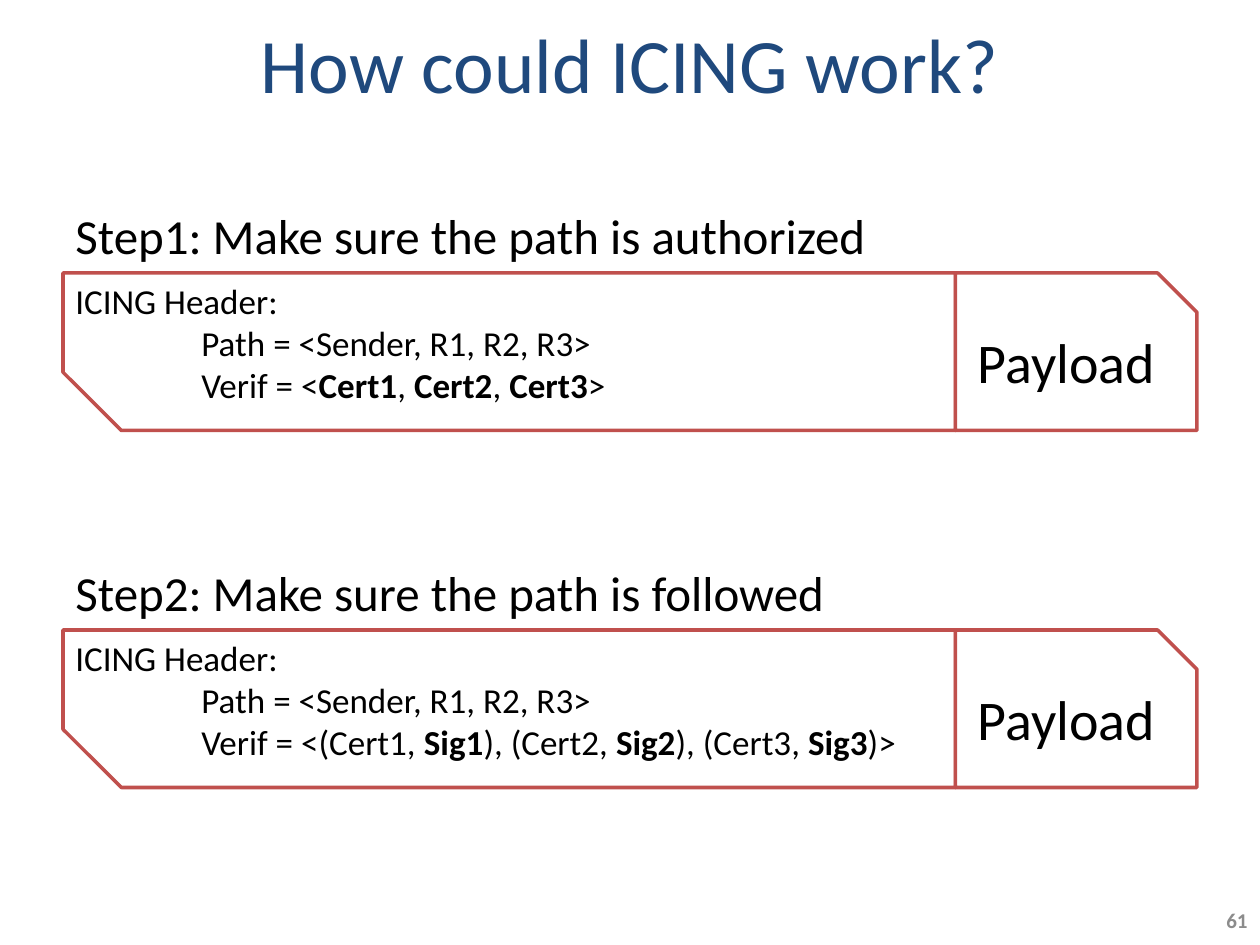
from lxml.etree import SubElement
from pptx import Presentation
from pptx.dml.color import RGBColor
from pptx.enum.shapes import MSO_SHAPE as Shape
from pptx.enum.text import MSO_ANCHOR as Anchor, PP_ALIGN as Align
from pptx.oxml.ns import qn
from pptx.util import Pt

FONT = "Calibri"
BLACK, WHITE, RED, NAVY, GRAY = "000000", "FFFFFF", "C0504D", "1F497D", "8C8C8C"
LEFT, HEADER_WIDTH, PAYLOAD_WIDTH, PACKET_HEIGHT = 36, 510, 138, 90
TAB_STOP = 72
PATH_LINE = "\tPath = <Sender, R1, R2, R3>"
STEPS = [
    ("Step1: Make sure the path is authorized",
     ["\tVerif = <", "Cert1", ", ", "Cert2", ", ", "Cert3", ">"]),
    ("Step2: Make sure the path is followed",
     ["\tVerif = <(Cert1, ", "Sig1", "), (Cert2, ", "Sig2", "), (Cert3, ", "Sig3", ")>"]),
]
FIRST_TOP, STEP_PITCH = 156, 204


def color(hex_string):
    return RGBColor.from_string(hex_string)


def style_span(span, size, hex_string, bold=False):
    span.font.name = FONT
    span.font.size = Pt(size)
    span.font.color.rgb = color(hex_string)
    span.font.bold = bold


def set_tab_stop(para, position):
    tabs = SubElement(para._p.get_or_add_pPr(), qn("a:tabLst"))
    SubElement(tabs, qn("a:tab"), pos=str(Pt(position)), algn="l")


def write_lines(frame, lines, size, hex_string=BLACK, align=Align.LEFT, anchor=Anchor.TOP):
    frame.word_wrap = True
    frame.vertical_anchor = anchor
    for index, spans in enumerate(lines):
        para = frame.add_paragraph() if index else frame.paragraphs[0]
        para.alignment = align
        if spans[0].startswith("\t"):
            set_tab_stop(para, TAB_STOP)
        for position, text in enumerate(spans):
            span = para.add_run()
            span.text = text
            style_span(span, size, hex_string, bold=position % 2 == 1)


def add_text(page, left, top, width, height, lines, size, **style):
    box = page.shapes.add_textbox(Pt(left), Pt(top), Pt(width), Pt(height))
    write_lines(box.text_frame, lines, size, **style)
    return box


def add_snipped_box(page, left, top, width, snip):
    box = page.shapes.add_shape(
        Shape.SNIP_1_RECTANGLE, Pt(left), Pt(top), Pt(width), Pt(PACKET_HEIGHT))
    box.shadow.inherit = False
    box.adjustments[0] = snip
    box.fill.solid()
    box.fill.fore_color.rgb = color(WHITE)
    box.line.color.rgb = color(RED)
    box.line.width = Pt(2)
    return box


def add_step(page, top, heading, verification):
    header = add_snipped_box(page, LEFT, top, HEADER_WIDTH, 0.37)
    header.rotation = 180
    payload = add_snipped_box(page, LEFT + HEADER_WIDTH, top, PAYLOAD_WIDTH, 0.25)
    write_lines(payload.text_frame, [["Payload"]], 32,
                align=Align.CENTER, anchor=Anchor.MIDDLE)
    add_text(page, LEFT, top, HEADER_WIDTH, 80,
             [["ICING Header:"], [PATH_LINE], verification], 20)
    add_text(page, LEFT, top - 42, 660, 41, [[heading]], 28)


def main():
    deck = Presentation()
    deck.slide_width, deck.slide_height = Pt(720), Pt(540)
    page = deck.slides.add_slide(deck.slide_layouts[6])
    add_text(page, LEFT, 0, 648, 72, [["How could ICING work?"]], 44,
             hex_string=NAVY, align=Align.CENTER, anchor=Anchor.MIDDLE)
    number = add_text(page, 670, 511, 50, 29, [["61"]], 12,
                      hex_string=GRAY, align=Align.RIGHT, anchor=Anchor.MIDDLE)
    number.text_frame.paragraphs[0].runs[0].font.bold = True
    for index, (heading, verification) in enumerate(STEPS):
        add_step(page, FIRST_TOP + index * STEP_PITCH, heading, verification)
    deck.save("out.pptx")


if __name__ == "__main__":
    main()
